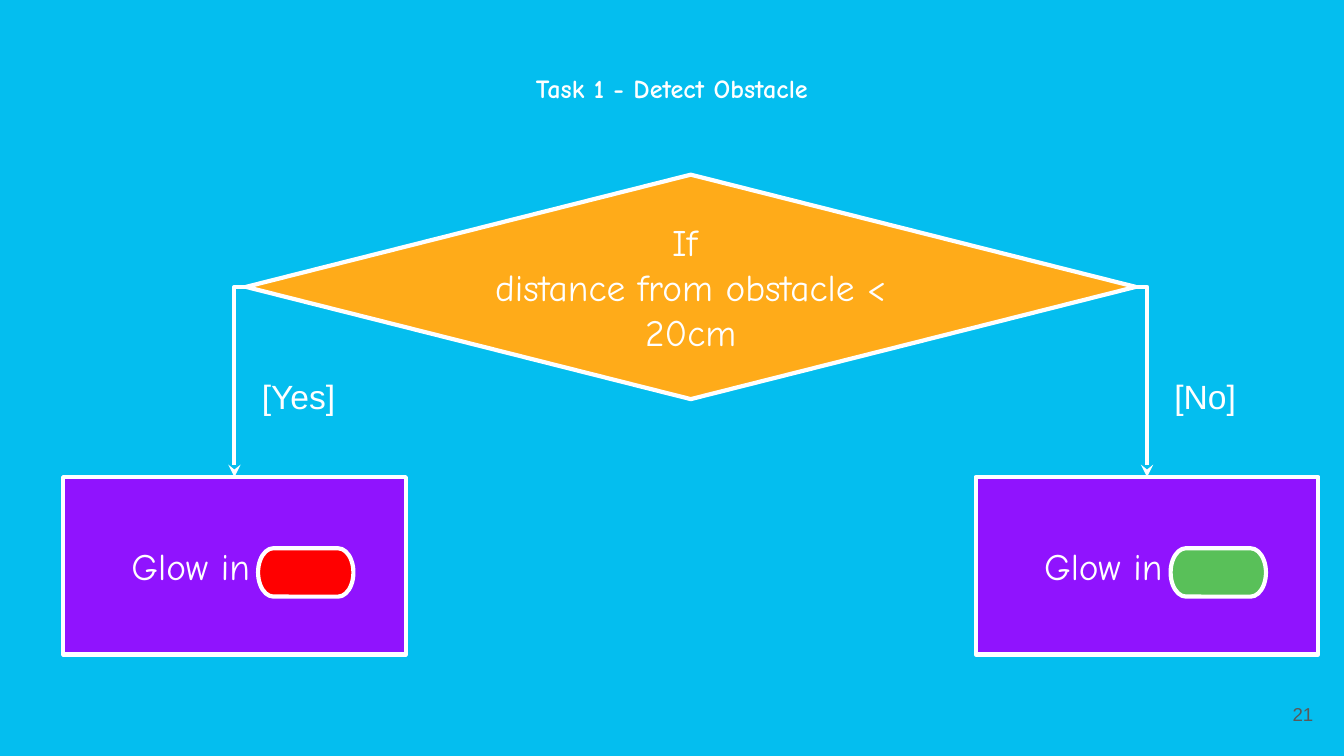
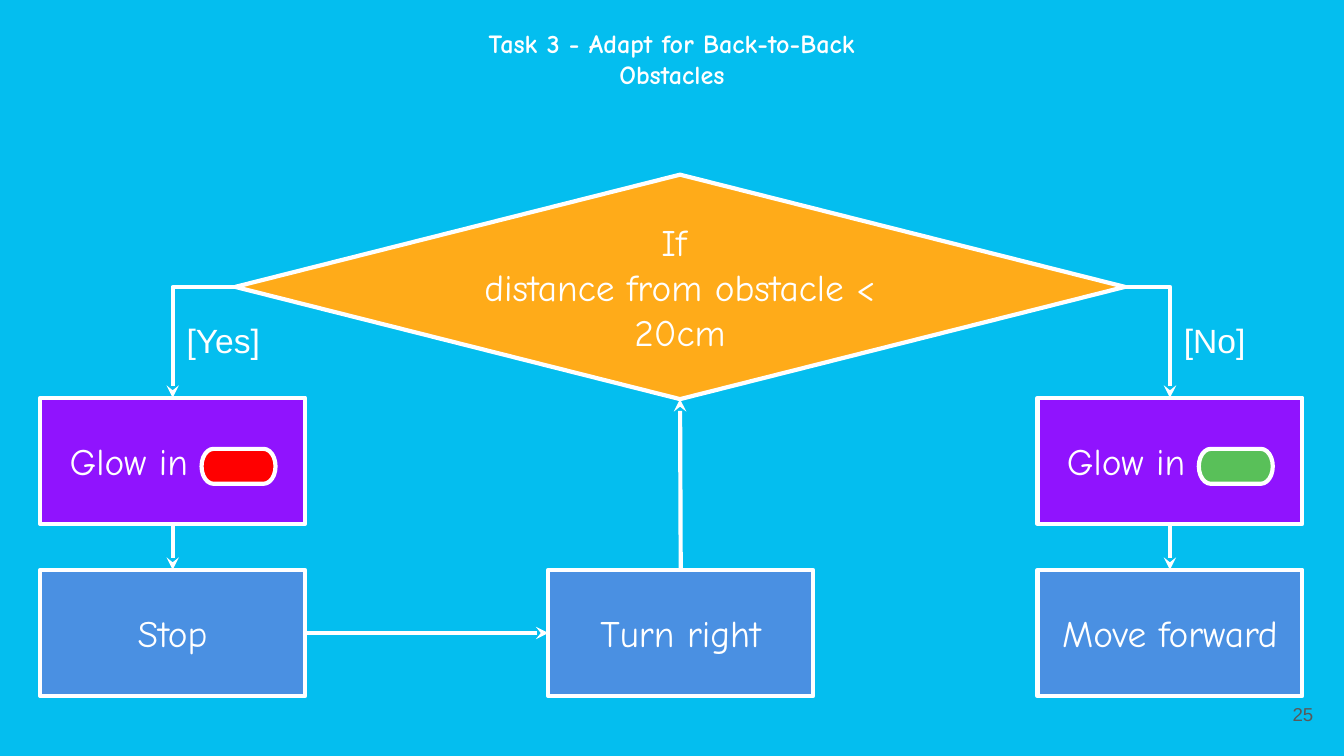
"""Build two flowchart slides about sensing obstacles."""
from lxml.etree import SubElement
from pptx import Presentation
from pptx.dml.color import RGBColor
from pptx.enum.shapes import MSO_CONNECTOR, MSO_SHAPE
from pptx.enum.text import MSO_ANCHOR, MSO_AUTO_SIZE, PP_ALIGN
from pptx.oxml.ns import qn
from pptx.util import Inches, Pt

WHITE, GREY, SKY = "FFFFFF", "595959", "04BEEF"
AMBER, GRAPE, BLUE = "FFAB19", "9013FE", "4A90E2"
RED, GREEN = "FF0000", "59C059"
COMIC, ARIAL = "Comic Neue", "Arial"
TOP, LEFT, BASE, RIGHT = range(4)

deck = Presentation()
deck.slide_width, deck.slide_height = Inches(10), Inches(5.625)
CELL = deck.slide_width / 100
deck.slide_master.background.fill.solid()
deck.slide_master.background.fill.fore_color.rgb = RGBColor.from_string(SKY)


def put(page, kind, at, words="", fill=None, size=20, font=COMIC, ink=WHITE, bold=False,
        align=PP_ALIGN.CENTER, anchor=MSO_ANCHOR.MIDDLE, wrap=True, pad=(1, 1, 1, 1)):
    """Place a title, text box or filled shape, in grid cells, with its text."""
    spot = [int(n * CELL) for n in at]
    if kind == "title":
        box = page.shapes.title
        box.left, box.top, box.width, box.height = spot
    elif kind == "text":
        box = page.shapes.add_textbox(*spot)
    else:
        box = page.shapes.add_shape(kind, *spot)
        box.shadow.inherit = False
        box.fill.solid()
        box.fill.fore_color.rgb = RGBColor.from_string(fill)
        box.line.color.rgb = RGBColor.from_string(WHITE)
        box.line.width = Pt(2.25)
    if not words:
        return box
    frame = box.text_frame
    frame.text = words
    frame.word_wrap, frame.auto_size = wrap, MSO_AUTO_SIZE.NONE
    frame.vertical_anchor = anchor
    frame.margin_left, frame.margin_top, frame.margin_right, frame.margin_bottom = [
        int(n * CELL) for n in pad]
    for para in frame.paragraphs:
        para.alignment = align
        for run in para.runs:
            run.font.size, run.font.name, run.font.bold = Pt(size), font, bold
            run.font.color.rgb = RGBColor.from_string(ink)
        for gap in para._p.findall(qn("a:br")):
            SubElement(gap, qn("a:rPr"), sz=str(size * 100))
    return box


def link(page, start, out, end, into, bent=False):
    """Join two shapes at the given sides with a white arrow."""
    kind = MSO_CONNECTOR.ELBOW if bent else MSO_CONNECTOR.STRAIGHT
    line = page.shapes.add_connector(kind, 0, 0, 0, 0)
    line.begin_connect(start, out)
    line.end_connect(end, into)
    line.line.color.rgb = RGBColor.from_string(WHITE)
    line.line.width = Pt(2.25)
    spec = line._element.spPr
    if bent:
        spec.find(qn("a:prstGeom")).set("prst", "bentConnector2")
    SubElement(spec.find(qn("a:ln")), qn("a:tailEnd"), type="stealth")
    SubElement(spec, qn("a:effectLst"))


TASKS = [
    dict(num="21", title="Task 1 - Detect Obstacle", head=(16.9, 4.9, 66.2, 4.3),
         test=18.3, cols=(4.7, 72.6), row=35.5, size=(25.5, 13.2),
         pill=(14.5, 5.3, 7.1, 3.6), tag=(13.8, 27), steps=[]),
    dict(num="25", title="Task 3 - Adapt for Back-to-Back\vObstacles", head=(6.5, 1.5, 87, 10.5),
         test=17.5, cols=(3, 77.2), row=29.6, size=(19.7, 9.4),
         pill=(12, 3.8, 5.5, 2.6), tag=(9.9, 22.8),
         steps=[("Stop", 3), ("Move forward", 77.2), ("Turn right", 40.8)]),
]

for task in TASKS:
    page = deck.slides.add_slide(deck.slide_layouts[5])
    put(page, "title", task["head"], task["title"], size=14, bold=True,
        anchor=MSO_ANCHOR.TOP, wrap=False, pad=(1, 0.5, 1, 0.5))
    test = put(page, MSO_SHAPE.DIAMOND, (task["test"], 13, 66.2, 16.7),
               "If \ndistance from obstacle < 20cm", AMBER)
    glows = []
    for col, side, tint, tag in zip(task["cols"], (LEFT, RIGHT), (RED, GREEN), ("[Yes]", "[No]")):
        glow = put(page, MSO_SHAPE.RECTANGLE, (col, task["row"], *task["size"]),
                   "Glow in", GRAPE, pad=(1, 1, 7.5, 1))
        dx, dy, wide, high = task["pill"]
        put(page, MSO_SHAPE.FLOWCHART_TERMINATOR,
            (col + dx, task["row"] + dy, wide, high), fill=tint)
        link(page, test, side, glow, TOP, bent=True)
        dx, row = task["tag"]
        put(page, "text", (col + dx, row, 7.7, 4.3), tag, size=18, font=ARIAL,
            align=PP_ALIGN.LEFT, anchor=MSO_ANCHOR.TOP)
        glows.append(glow)
    steps = [put(page, MSO_SHAPE.RECTANGLE, (col, 42.4, *task["size"]), words, BLUE)
             for words, col in task["steps"]]
    for glow, step in zip(glows, steps):
        link(page, glow, BASE, step, TOP)
    if steps:
        stop, move, turn = steps
        link(page, stop, RIGHT, turn, LEFT)
        link(page, turn, TOP, test, BASE)
    put(page, "text", (92.7, 51, 6, 4.3), task["num"], size=10, font=ARIAL, ink=GREY,
        align=PP_ALIGN.RIGHT)

deck.save("out.pptx")
